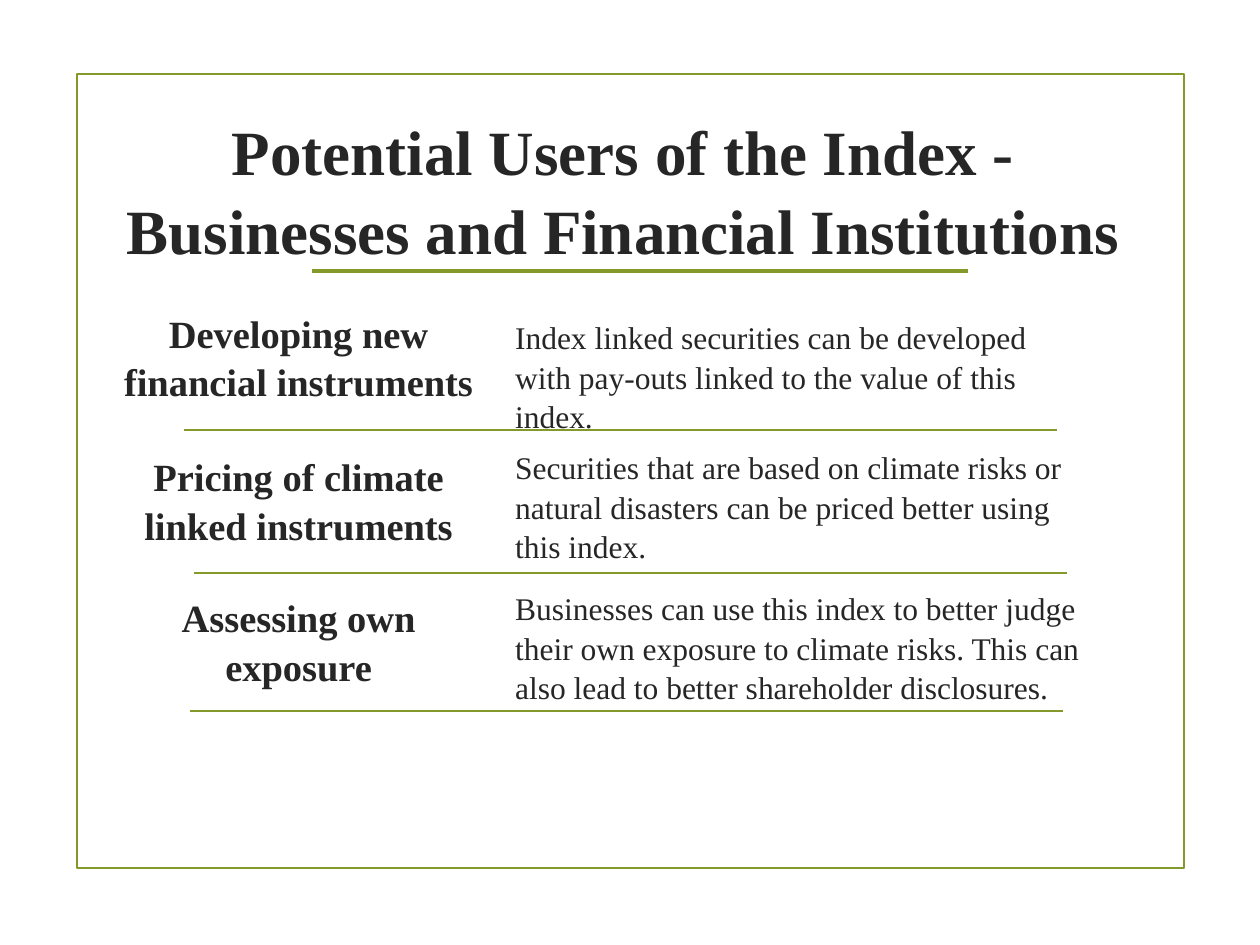
from pptx import Presentation
from pptx import util as u
from pptx.dml.color import RGBColor
from pptx.enum import shapes, text
from pptx.oxml import parse_xml
from pptx.oxml.ns import nsdecls

INK = "262626"
GREEN = "83992A"
FONT = "Times New Roman"

ROWS = [
    ("Developing new financial instruments",
     "Index linked securities can be developed with pay-outs linked to the "
     "value of this index.",
     2.39, 2.46, 1.46, 3.41),
    ("Pricing of climate linked instruments",
     "Securities that are based on climate risks or natural disasters can be "
     "priced better using this index.",
     3.53, 3.49, 1.54, 4.55),
    ("Assessing own exposure",
     "Businesses can use this index to better judge their own exposure to "
     "climate risks. This can also lead to better shareholder disclosures.",
     4.65, 4.61, 1.51, 5.64),
]


def color(code):
    return RGBColor.from_string(code)


def place(shape, box):
    shape.left, shape.top, shape.width, shape.height = map(u.Inches, box)


def write(shape, words, size, bold, align):
    frame = shape.text_frame
    frame.word_wrap = True
    frame.auto_size = text.MSO_AUTO_SIZE.NONE
    frame.vertical_anchor = text.MSO_ANCHOR.TOP
    para = frame.paragraphs[0]
    para.alignment = align
    para.line_spacing = 1.05
    run = para.add_run()
    run.text = words
    run.font.name = FONT
    run.font.size = u.Pt(size)
    run.font.bold = bold
    run.font.color.rgb = color(INK)


def label(slide, box, words, size, bold, align):
    shape = slide.shapes.add_textbox(*map(u.Inches, box))
    write(shape, words, size, bold, align)


def rule(slide, left, top, width, weight):
    ends = map(u.Inches, (left, top, left + width, top))
    line = slide.shapes.add_connector(shapes.MSO_CONNECTOR.STRAIGHT, *ends)
    line.line.color.rgb = color(GREEN)
    line.line.width = u.Pt(weight)
    props = line._element.spPr
    props.append(parse_xml(f"<a:effectLst {nsdecls('a')}/>"))


def border(slide, box):
    shape = slide.shapes.add_shape(
        shapes.MSO_SHAPE.RECTANGLE, *map(u.Inches, box))
    shape.shadow.inherit = False
    shape.fill.background()
    shape.line.color.rgb = color(GREEN)
    shape.line.width = u.Pt(1.25)


def header(slide, box):
    title = slide.shapes.title
    place(title, box)
    write(title, "Potential Users of the Index - Businesses and Financial "
          "Institutions", 36, True, text.PP_ALIGN.CENTER)
    rule(slide, 2.48, 2.15, 5.2, 2)


def table(slide, left, split, right):
    for name, note, name_top, note_top, start, base in ROWS:
        label(slide, (left, name_top, split - left, 0.87), name, 22, True,
              text.PP_ALIGN.CENTER)
        label(slide, (split, note_top, right - split, 0.95), note, 18, False,
              text.PP_ALIGN.LEFT)
        rule(slide, start, base, 6.93, 1.25)


def main():
    deck = Presentation()
    deck.slide_width = u.Inches(10)
    deck.slide_height = u.Inches(7.5)
    slide = deck.slides.add_slide(deck.slide_layouts[5])
    border(slide, (0.61, 0.59, 8.79, 6.3))
    header(slide, (0.83, 0.81, 8.23, 1.43))
    table(slide, 0.75, 3.99, 8.69)
    deck.save("out.pptx")


if __name__ == "__main__":
    main()
